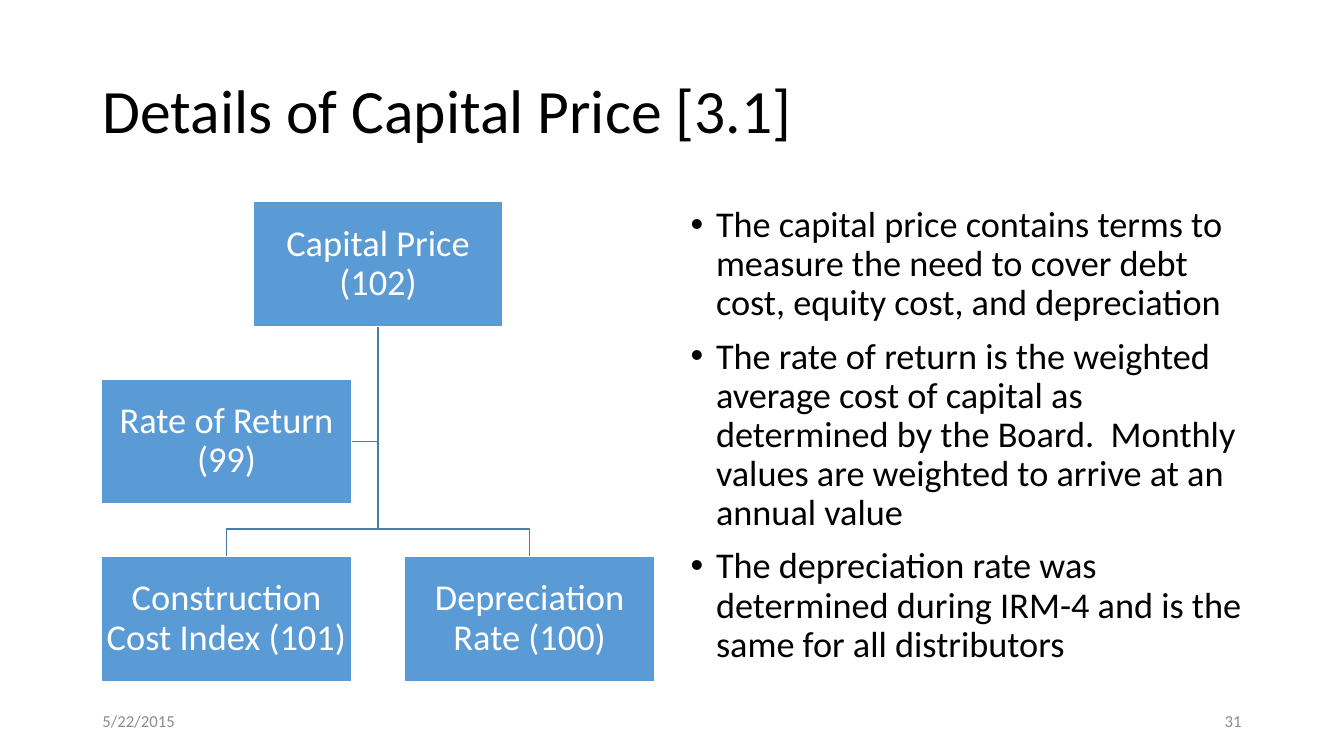
from dataclasses import dataclass

from pptx import Presentation
from pptx import util as u
from pptx.dml.color import RGBColor
from pptx.enum import shapes, text

Cm, Pt = u.Cm, u.Pt
ALIGN, ANCHOR = text.PP_ALIGN, text.MSO_ANCHOR


@dataclass(frozen=True)
class Theme:
    font: str = "Calibri"
    ink: str = "000000"
    muted: str = "8C8C8C"
    white: str = "FFFFFF"
    box: str = "5B9BD5"
    link: str = "497CAB"
    title_size: float = 44
    body_size: float = 25.9
    box_size: float = 26
    footer_size: float = 12


THEME = Theme()

# Org chart geometry in cm
BOX_W, BOX_H = 6.3, 3.15
COL_LEFT, COL_STEP = 2.56, 3.82
ROW_TOP, ROW_STEP = 5.08, 4.47
BUS_GAP = 0.69  # height of the branch line above the bottom row

# label, column, row
NODES = [
    ("Capital Price (102)", 1, 0),
    ("Construction Cost Index (101)", 0, 2),
    ("Depreciation Rate (100)", 2, 2),
    ("Rate of Return (99)", 0, 1),
]
BULLETS = [
    "The capital price contains terms to measure the need to cover debt cost, "
    "equity cost, and depreciation",
    "The rate of return is the weighted average cost of capital as determined "
    "by the Board.  Monthly values are weighted to arrive at an annual value",
    "The depreciation rate was determined during IRM-4 and is the same for all "
    "distributors",
]


def apply(obj, values):
    for name, value in values.items():
        setattr(obj, name, value)


def place(sp, left, top, width, height):
    apply(sp, dict(left=Cm(left), top=Cm(top), width=Cm(width), height=Cm(height)))


def write(sp, lines, size, color, frame=None, para=None):
    """Fill a shape with one formatted paragraph per line."""
    tf = sp.text_frame
    apply(tf, {"word_wrap": True, "auto_size": text.MSO_AUTO_SIZE.NONE, **(frame or {})})
    for i, line in enumerate(lines):
        p = tf.paragraphs[0] if i == 0 else tf.add_paragraph()
        apply(p, para or {})
        r = p.add_run()
        r.text = line
        apply(r.font, {"name": THEME.font, "size": Pt(size)})
        r.font.color.rgb = RGBColor.from_string(color)
    return tf


def set_line(sp, color):
    sp.line.color.rgb = RGBColor.from_string(color)
    sp.line.width = Pt(1)
    sp.shadow.inherit = False


def box_corner(col, row):
    return COL_LEFT + col * COL_STEP, ROW_TOP + row * ROW_STEP


def add_node(s, label, col, row):
    left, top = box_corner(col, row)
    sp = s.shapes.add_shape(shapes.MSO_SHAPE.RECTANGLE,
                            Cm(left), Cm(top), Cm(BOX_W), Cm(BOX_H))
    sp.fill.solid()
    sp.fill.fore_color.rgb = RGBColor.from_string(THEME.box)
    set_line(sp, THEME.white)
    inset = Cm(0.05)
    write(sp, [label], THEME.box_size, THEME.white,
          dict(vertical_anchor=ANCHOR.MIDDLE, margin_left=inset, margin_right=inset,
               margin_top=inset, margin_bottom=inset),
          dict(alignment=ALIGN.CENTER, line_spacing=0.9))


def add_link(s, *points):
    (x, y), *rest = [(Cm(px), Cm(py)) for px, py in points]
    builder = s.shapes.build_freeform(x, y)
    builder.add_line_segments(rest, close=False)
    sp = builder.convert_to_shape()
    sp.fill.background()
    set_line(sp, THEME.link)


def add_org_chart(s):
    # Links go behind the boxes
    root_left, root_top = box_corner(1, 0)
    x, y = root_left + BOX_W / 2, root_top + BOX_H
    side_left, side_top = box_corner(0, 1)
    side_y = side_top + BOX_H / 2
    add_link(s, (x, y), (x, side_y), (side_left + BOX_W, side_y))
    for col in (2, 0):
        left, top = box_corner(col, 2)
        child_x, bus_y = left + BOX_W / 2, top - BUS_GAP
        add_link(s, (x, y), (x, bus_y), (child_x, bus_y), (child_x, top))
    for node in NODES:
        add_node(s, *node)


def add_footer(s, label, left, align):
    sp = s.shapes.add_textbox(Cm(left), Cm(17.65), Cm(7.62), Cm(1.01))
    write(sp, [label], THEME.footer_size, THEME.muted,
          dict(vertical_anchor=ANCHOR.MIDDLE), dict(alignment=align))


def main():
    prs = Presentation()
    prs.slide_width, prs.slide_height = Cm(33.87), Cm(19.05)
    s = prs.slides.add_slide(prs.slide_layouts[1])

    # Title
    title = s.shapes.title
    place(title, 2.33, 1.01, 29.21, 3.68)
    write(title, ["Details of Capital Price [3.1]"], THEME.title_size, THEME.ink,
          dict(vertical_anchor=ANCHOR.MIDDLE),
          dict(alignment=ALIGN.LEFT, line_spacing=0.9))

    # Bullet list
    body = s.placeholders[1]
    place(body, 17.15, 5.07, 14.4, 12.09)
    tf = write(body, BULLETS, THEME.body_size, THEME.ink,
               dict(vertical_anchor=ANCHOR.TOP),
               dict(line_spacing=0.9, space_before=Pt(10)))
    for p in tf.paragraphs:
        pPr = p._p.get_or_add_pPr()
        pPr.set("marL", str(Cm(0.64)))
        pPr.set("indent", str(-Cm(0.64)))

    add_org_chart(s)

    # Footer
    add_footer(s, "31", 23.92, ALIGN.RIGHT)
    add_footer(s, "5/22/2015", 2.33, ALIGN.LEFT)

    prs.save("out.pptx")


if __name__ == "__main__":
    main()
